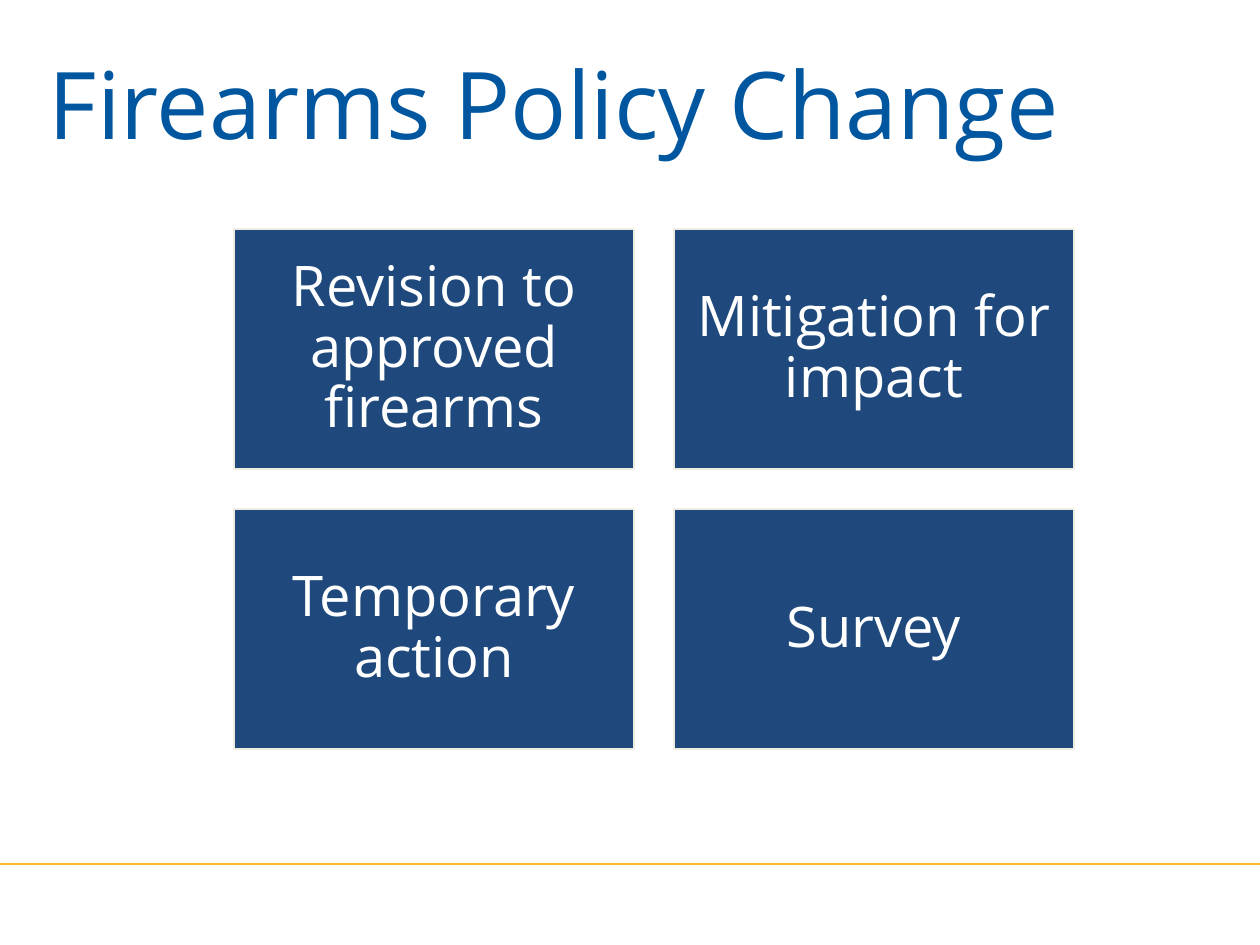
"""Build the Firearms Policy Change slide: a title, four topic boxes and a footer rule."""
from lxml import etree
from pptx import Presentation
from pptx import util as u
from pptx.dml.color import RGBColor
from pptx.enum import shapes, text
from pptx.oxml import ns

PX = u.Inches(1) / 84
TITLE_BLUE = RGBColor(0x00, 0x56, 0x9F)
BOX_BLUE = RGBColor(0x1F, 0x49, 0x7D)
CREAM = RGBColor(0xEE, 0xEC, 0xE1)
GOLD = RGBColor(0xFD, 0xB9, 0x28)
WHITE = RGBColor(0xFF, 0xFF, 0xFF)

LEFT, TOP = 234, 229
WIDTH, HEIGHT, GAP = 400, 240, 40
TOPICS = [
    ["Revision to approved firearms", "Mitigation for impact"],
    ["Temporary action", "Survey"],
]


def px(*lengths):
    return [u.Emu(round(length * PX)) for length in lengths]


def write(box, words, *, size, color, spacing, align, anchor, margin=0):
    frame = box.text_frame
    frame.word_wrap = True
    frame.vertical_anchor = anchor
    inset = px(margin)[0]
    frame.margin_left = frame.margin_right = inset
    frame.margin_top = frame.margin_bottom = inset
    para = frame.paragraphs[0]
    para.alignment = align
    para.line_spacing = spacing
    span = para.add_run()
    span.text = words
    span.font.name = "Open Sans"
    span.font.size = u.Pt(size)
    span.font.color.rgb = color


deck = Presentation()
deck.slide_width, deck.slide_height = px(1260, 945)
page = deck.slides.add_slide(deck.slide_layouts[6])

title = page.shapes.add_textbox(*px(49, 88, 1211, 77))
write(title, "Firearms Policy Change", size=80, color=TITLE_BLUE, spacing=u.Pt(60),
      align=text.PP_ALIGN.LEFT, anchor=text.MSO_ANCHOR.TOP)

rule = page.shapes.add_connector(shapes.MSO_CONNECTOR.STRAIGHT, *px(0, 864, 1260, 864))
rule.line.color.rgb = GOLD
rule.line.width = u.Pt(2.25)
etree.SubElement(rule._element.spPr, ns.qn("a:effectLst"))

for row, topics in enumerate(TOPICS):
    for column, topic in enumerate(topics):
        left = LEFT + column * (WIDTH + GAP)
        top = TOP + row * (HEIGHT + GAP)
        box = page.shapes.add_shape(shapes.MSO_SHAPE.RECTANGLE, *px(left, top, WIDTH, HEIGHT))
        box.shadow.inherit = False
        box.fill.solid()
        box.fill.fore_color.rgb = BOX_BLUE
        box.line.color.rgb = CREAM
        box.line.width = u.Pt(2)
        write(box, topic, size=48, color=WHITE, spacing=0.9, margin=17,
              align=text.PP_ALIGN.CENTER, anchor=text.MSO_ANCHOR.MIDDLE)

deck.save("out.pptx")
